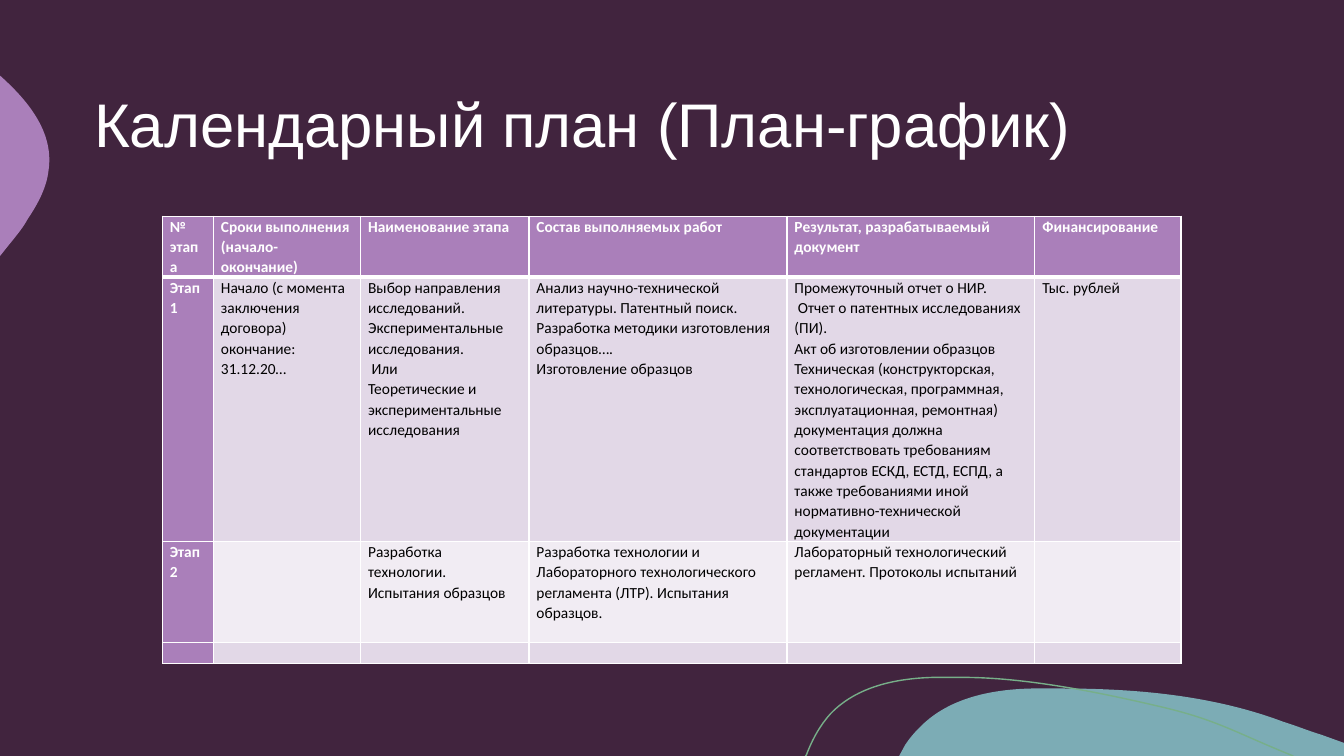
from dataclasses import dataclass
from typing import NamedTuple, Optional

from lxml.etree import Element, SubElement
from pptx import Presentation
from pptx.dml.color import RGBColor
from pptx.enum.text import MSO_ANCHOR, MSO_AUTO_SIZE, PP_ALIGN
from pptx.oxml.ns import qn
from pptx.util import Emu, Inches, Pt

PLUM = RGBColor(0x41, 0x24, 0x3E)
LILAC = RGBColor(0xAA, 0x7F, 0xBA)
TEAL = RGBColor(0x7C, 0xAC, 0xB5)
GREEN = RGBColor(0x77, 0xAF, 0x89)
DARK_BAND = RGBColor(0xE2, 0xD8, 0xE7)
LIGHT_BAND = RGBColor(0xF1, 0xEC, 0xF3)
WHITE = RGBColor(0xFF, 0xFF, 0xFF)
BLACK = RGBColor(0x00, 0x00, 0x00)

SLIDE_WIDTH, SLIDE_HEIGHT = Inches(13.33), Inches(7.5)
CELL_FONT_SIZE = 11
CELL_MARGIN = Pt(5.4)
COLUMN_SHARES = (3.8, 10.95, 12.53, 19.2, 18.45, 10.88)
ROW_SHARES = (8.07, 34.93, 13.42, 2.69)

Point = tuple[float, float]


@dataclass(frozen=True)
class Wave:
    start: Point
    steps: tuple[tuple[Point, ...], ...]
    fill: Optional[RGBColor] = None
    line: Optional[RGBColor] = None


class Line(NamedTuple):
    text: str
    indent: float = 0


class Row(NamedTuple):
    band: RGBColor
    cells: tuple[tuple[Line, ...], ...]


WAVES = (
    Wave((79.05, 91.07), (
        ((84.6, 91.07), (90.3, 92), (95.48, 95.47)),
        ((96.45, 96), (97.35, 96.67), (98.33, 97.2)),
        ((100, 98.27),), ((100, 100),), ((66.9, 100),), ((67.35, 98.53),),
        ((67.65, 97.73), (67.95, 97.07), (68.33, 96.4)),
        ((70.43, 92.4), (73.65, 91.2), (76.73, 91.07)),
        ((77.48, 91.07), (78.23, 91.07), (79.05, 91.07)),
    ), fill=TEAL),
    Wave((0, 10), (
        ((0.08, 10.13),),
        ((2.25, 13.6), (4.05, 17.73), (3.6, 22.67)),
        ((3.45, 24.93), (2.78, 27.07), (2.03, 29.07)),
        ((1.8, 29.87), (1.28, 31.07), (0.6, 32.53)),
        ((0, 33.87),),
    ), fill=LILAC),
    Wave((59.93, 100), (
        ((60, 99.87),),
        ((60.45, 97.73), (61.05, 95.87), (61.8, 94.4)),
        ((63.75, 90.8), (66.68, 89.73), (69.45, 89.6)),
        ((71.63, 89.6),),
        ((76.65, 89.6), (82.5, 91.87), (86.63, 93.6)),
        ((90.68, 95.33), (91.95, 96.93), (96.23, 100)),
    ), line=GREEN),
)

ROWS = (
    Row(LILAC, (
        (Line("№ этапа"),),
        (Line("Сроки выполнения (начало-окончание)"),),
        (Line("Наименование этапа"),),
        (Line("Состав выполняемых работ"),),
        (Line("Результат, разрабатываемый документ"),),
        (Line("Финансирование"),),
    )),
    Row(DARK_BAND, (
        (Line("Этап 1"),),
        (Line("Начало (с момента заключения договора) окончание: 31.12.20…"),),
        (Line("Выбор направления исследований. Экспериментальные исследования."),
         Line("Или", indent=2.5),
         Line("Теоретические и экспериментальные исследования")),
        (Line("Анализ научно-технической литературы. Патентный поиск."),
         Line("Разработка методики изготовления образцов…."),
         Line("Изготовление образцов")),
        (Line("Промежуточный отчет о НИР."),
         Line("Отчет о патентных исследованиях (ПИ).", indent=2.5),
         Line("Акт об изготовлении образцов"),
         Line("Техническая (конструкторская, технологическая, программная, "
              "эксплуатационная, ремонтная) документация должна соответствовать "
              "требованиям стандартов ЕСКД, ЕСТД, ЕСПД, а также требованиями иной "
              "нормативно-технической документации")),
        (Line("Тыс. рублей"),),
    )),
    Row(LIGHT_BAND, (
        (Line("Этап 2"),),
        (),
        (Line("Разработка технологии. Испытания образцов"),),
        (Line("Разработка технологии и Лабораторного технологического регламента "
              "(ЛТР). Испытания образцов."),),
        (Line("Лабораторный технологический регламент. Протоколы испытаний"),),
        (),
    )),
    Row(DARK_BAND, ((),) * len(COLUMN_SHARES)),
)


def across(percent: float) -> Emu:
    return Emu(round(SLIDE_WIDTH * percent / 100))


def down(percent: float) -> Emu:
    return Emu(round(SLIDE_HEIGHT * percent / 100))


def bend_segments(shape, steps: tuple[tuple[Point, ...], ...]) -> None:
    segments = list(shape.element.iter(qn("a:lnTo")))
    for segment, step in zip(segments, steps):
        if len(step) == 1:
            continue
        segment.tag = qn("a:cubicBezTo")
        for position, (x, y) in enumerate(step[:-1]):
            handle = Element(qn("a:pt"), x=str(across(x) - shape.left),
                             y=str(down(y) - shape.top))
            segment.insert(position, handle)


def draw_wave(page, wave: Wave) -> None:
    points = [wave.start] + [step[-1] for step in wave.steps]
    places = [(across(x), down(y)) for x, y in points]
    builder = page.shapes.build_freeform(*places[0])
    builder.add_line_segments(places[1:], close=wave.fill is not None)
    shape = builder.convert_to_shape()
    bend_segments(shape, wave.steps)
    shape.shadow.inherit = False
    if wave.fill is None:
        shape.fill.background()
    else:
        shape.fill.solid()
        shape.fill.fore_color.rgb = wave.fill
    if wave.line is None:
        shape.line.fill.background()
    else:
        shape.line.color.rgb = wave.line
        shape.line.width = Pt(1)


def draw_title(page, text: str) -> None:
    title = page.shapes.title
    title.element.getparent().append(title.element)
    title.left, title.top = across(6.25), down(11.07)
    title.width, title.height = across(87.5), down(11.6)
    frame = title.text_frame
    frame.text = text
    frame.word_wrap = True
    frame.auto_size = MSO_AUTO_SIZE.NONE
    frame.vertical_anchor = MSO_ANCHOR.MIDDLE
    para = frame.paragraphs[0]
    para.alignment = PP_ALIGN.LEFT
    para.line_spacing = 0.9
    para.font.name, para.font.size = "Arial", Pt(44)
    para.font.color.rgb = WHITE


def set_border(cell, side: str, points: float) -> None:
    edge = SubElement(cell._tc.get_or_add_tcPr(), qn(f"a:ln{side}"), w=str(Pt(points)))
    fill = SubElement(edge, qn("a:solidFill"))
    SubElement(fill, qn("a:srgbClr"), val=str(WHITE))


def fill_cell(cell, lines: tuple[Line, ...], fill: RGBColor, heading: bool) -> None:
    cell.margin_left = cell.margin_right = CELL_MARGIN
    cell.margin_top = cell.margin_bottom = 0
    cell.fill.solid()
    cell.fill.fore_color.rgb = fill
    frame = cell.text_frame
    frame.text = "\n".join(line.text for line in lines)
    for para, line in zip(frame.paragraphs, lines or (Line(""),)):
        if line.indent:
            para._p.get_or_add_pPr().set("indent", str(Pt(line.indent)))
        para.line_spacing = 1.07
        para.font.name, para.font.size = "Calibri", Pt(CELL_FONT_SIZE)
        para.font.bold = heading
        para.font.color.rgb = WHITE if heading else BLACK
        if not line.text:
            SubElement(para._p, qn("a:endParaRPr"), sz=str(CELL_FONT_SIZE * 100))


def draw_plan(page) -> None:
    table = page.shapes.add_table(
        len(ROWS), len(COLUMN_SHARES), across(12.08), down(28.6),
        across(sum(COLUMN_SHARES)), down(sum(ROW_SHARES))).table
    table.first_col = True
    for column, share in zip(table.columns, COLUMN_SHARES):
        column.width = across(share)
    for r, (row, share) in enumerate(zip(ROWS, ROW_SHARES)):
        table.rows[r].height = down(share)
        for c, lines in enumerate(row.cells):
            cell = table.cell(r, c)
            for side in "LRTB":
                thick = (r, side) in ((0, "B"), (1, "T"))
                set_border(cell, side, 3 if thick else 1)
            heading = r == 0 or c == 0
            fill_cell(cell, lines, LILAC if heading else row.band, heading)


def main() -> None:
    deck = Presentation()
    deck.slide_width, deck.slide_height = SLIDE_WIDTH, SLIDE_HEIGHT
    page = deck.slides.add_slide(deck.slide_layouts[5])
    page.background.fill.solid()
    page.background.fill.fore_color.rgb = PLUM
    for wave in WAVES:
        draw_wave(page, wave)
    draw_title(page, "Календарный план (План-график)")
    draw_plan(page)
    deck.save("out.pptx")


if __name__ == "__main__":
    main()
